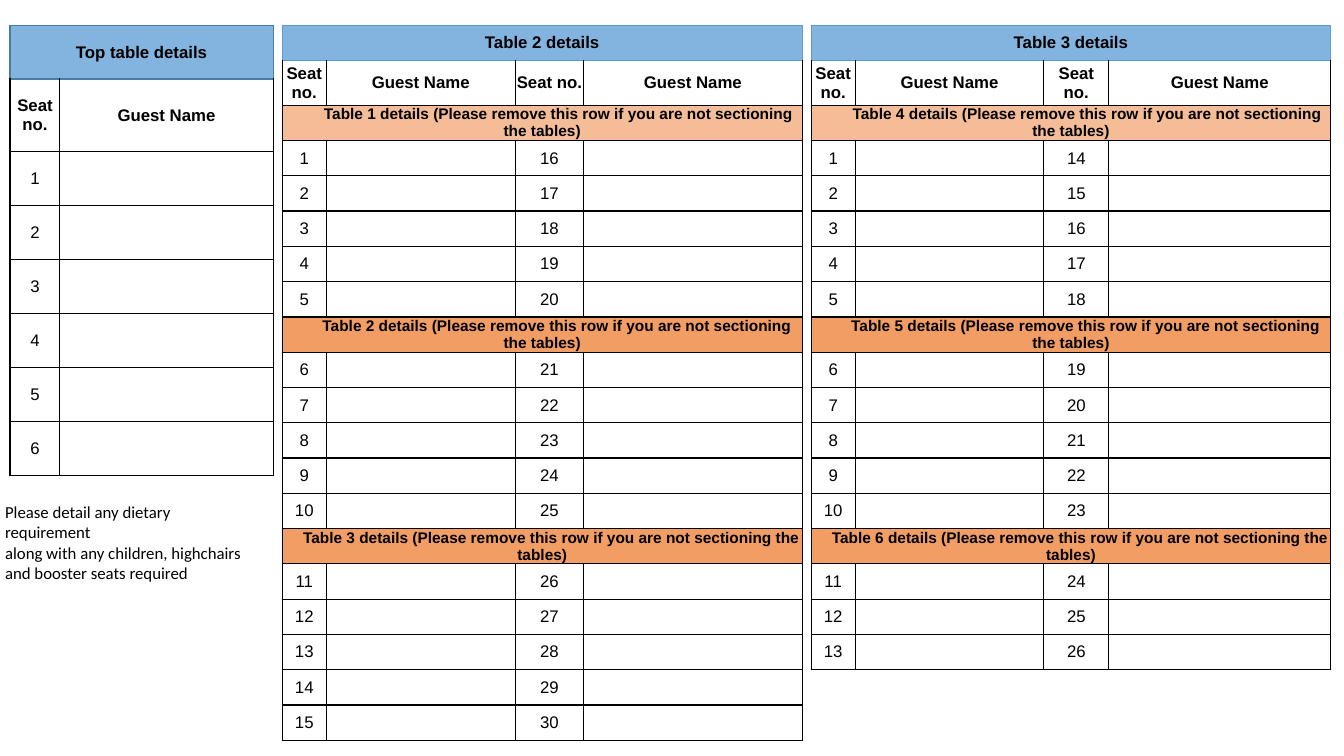
from lxml import etree
from pptx import Presentation
from pptx.dml.color import RGBColor
from pptx.enum.text import MSO_ANCHOR, PP_ALIGN
from pptx.oxml.ns import qn
from pptx.util import Pt

MIDDLE, TOP = MSO_ANCHOR.MIDDLE, MSO_ANCHOR.TOP
CENTER, LEFT = PP_ALIGN.CENTER, PP_ALIGN.LEFT
BLACK = RGBColor(0x00, 0x00, 0x00)
WHITE = RGBColor(0xFF, 0xFF, 0xFF)
BLUE = RGBColor(0x83, 0xB3, 0xDF)
BLUE_EDGE = RGBColor(0x5B, 0x9B, 0xD5)
DARK_EDGE = RGBColor(0x48, 0x7C, 0xA9)
PEACH = RGBColor(0xF5, 0xBD, 0x97)
ORANGE = RGBColor(0xF1, 0x9D, 0x64)
SECTION_STYLES = [(PEACH, 23.4), (ORANGE, 21.4), (ORANGE, 13.3)]
TABLE_TOP = 18


class SeatingSlide:
    """Holds the text style and the current slide, and draws its elements."""

    def __init__(self, prs):
        self.s = prs.slides.add_slide(prs.slide_layouts[6])
        self.cell_format = {"margin_left": 0, "margin_right": 0, "margin_top": 0,
                            "margin_bottom": 0, "vertical_anchor": MIDDLE}

    def text(self, p, text, font="Arial", size=12, bold=False, align=CENTER, indent=0):
        if indent:
            p._p.get_or_add_pPr().set("indent", str(Pt(indent)))
        p.alignment = align
        r = p.add_run()
        r.text = text
        for name, value in {"name": font, "size": Pt(size), "bold": bold}.items():
            setattr(r.font, name, value)
        r.font.color.rgb = BLACK

    def borders(self, cell, colors):
        tc_pr = cell._tc.get_or_add_tcPr()
        for side, color in zip("LRTB", colors):
            ln = etree.SubElement(tc_pr, qn(f"a:ln{side}"), w=str(Pt(1)))
            fill = etree.SubElement(ln, qn("a:solidFill"))
            etree.SubElement(fill, qn("a:srgbClr"), val=str(color))

    def cell(self, cell, text, colors, fill=None, **style):
        for name, value in self.cell_format.items():
            setattr(cell, name, value)
        self.borders(cell, colors)
        if fill is None:
            cell.fill.background()
        else:
            cell.fill.solid()
            cell.fill.fore_color.rgb = fill
        if text:
            self.text(cell.text_frame.paragraphs[0], text, **style)

    def table(self, x, widths, row_height, header_height, title, edge, body):
        heights = [row_height, header_height] + [row_height] * len(body)
        frame = self.s.shapes.add_table(len(heights), len(widths), Pt(x), Pt(TABLE_TOP),
                                        Pt(sum(widths)), Pt(sum(heights)))
        table = frame.table
        table.first_row = table.horz_banding = False
        for column, width in zip(table.columns, widths):
            column.width = Pt(width)
        for row, height in zip(table.rows, heights):
            row.height = Pt(height)
        last = len(widths) - 1
        header = ["Seat no.", "Guest Name"] * (len(widths) // 2)
        rows = [([title], dict(colors=[edge] * 4, fill=BLUE, bold=True)),
                (header, dict(colors=[BLACK, BLACK, edge, BLACK], bold=True))]
        rows += [(texts, dict(colors=[BLACK] * 4, **style)) for texts, style in body]
        for i, (texts, style) in enumerate(rows):
            if len(texts) == 1:
                table.cell(i, 0).merge(table.cell(i, last))
            for j in range(len(widths)):
                self.cell(table.cell(i, j), texts[j] if j < len(texts) else "", **style)

    def note(self, x, y, width, height, lines):
        sp = self.s.shapes.add_textbox(Pt(x), Pt(y), Pt(width), Pt(height))
        sp.fill.solid()
        sp.fill.fore_color.rgb = WHITE
        tf = sp.text_frame
        for name, value in {"word_wrap": True, "vertical_anchor": TOP,
                            "margin_left": Pt(3.6), "margin_right": Pt(3.6),
                            "margin_top": Pt(3.6), "margin_bottom": Pt(3.6)}.items():
            setattr(tf, name, value)
        for i, line in enumerate(lines):
            p = tf.paragraphs[0] if i == 0 else tf.add_paragraph()
            self.text(p, line, font="Calibri", align=LEFT)


def section_rows(first_table, sizes):
    """Return section bands, each followed by its pairs of numbered seats."""
    rows, seat, half = [], 1, sum(sizes)
    for i, (size, (fill, indent)) in enumerate(zip(sizes, SECTION_STYLES)):
        band = (f"Table {first_table + i} details "
                "(Please remove this row if you are not sectioning the tables)")
        rows.append(([band], dict(fill=fill, size=11, bold=True, indent=indent)))
        rows += [([str(n), "", str(n + half), ""], {}) for n in range(seat, seat + size)]
        seat += size
    return rows


def main():
    prs = Presentation()
    prs.slide_width, prs.slide_height = Pt(960), Pt(540)
    slide = SeatingSlide(prs)
    slide.table(201.6, [31.5, 135, 48.8, 156.2], 25.2, 32, "Table 2 details",
                BLUE_EDGE, section_rows(1, [5, 5, 5]))
    slide.table(579.4, [31.5, 134.7, 46.5, 158.5], 25.2, 32, "Table 3 details",
                BLUE_EDGE, section_rows(4, [5, 5, 3]))
    slide.table(7.2, [35.6, 152.4], 38.5, 52, "Top table details",
                DARK_EDGE, [([str(n), ""], {}) for n in range(1, 7)])
    slide.note(0, 355, 188.6, 65.5,
               ["Please detail any dietary requirement",
                "along with any children, highchairs and booster seats required"])
    prs.save("out.pptx")


if __name__ == "__main__":
    main()
